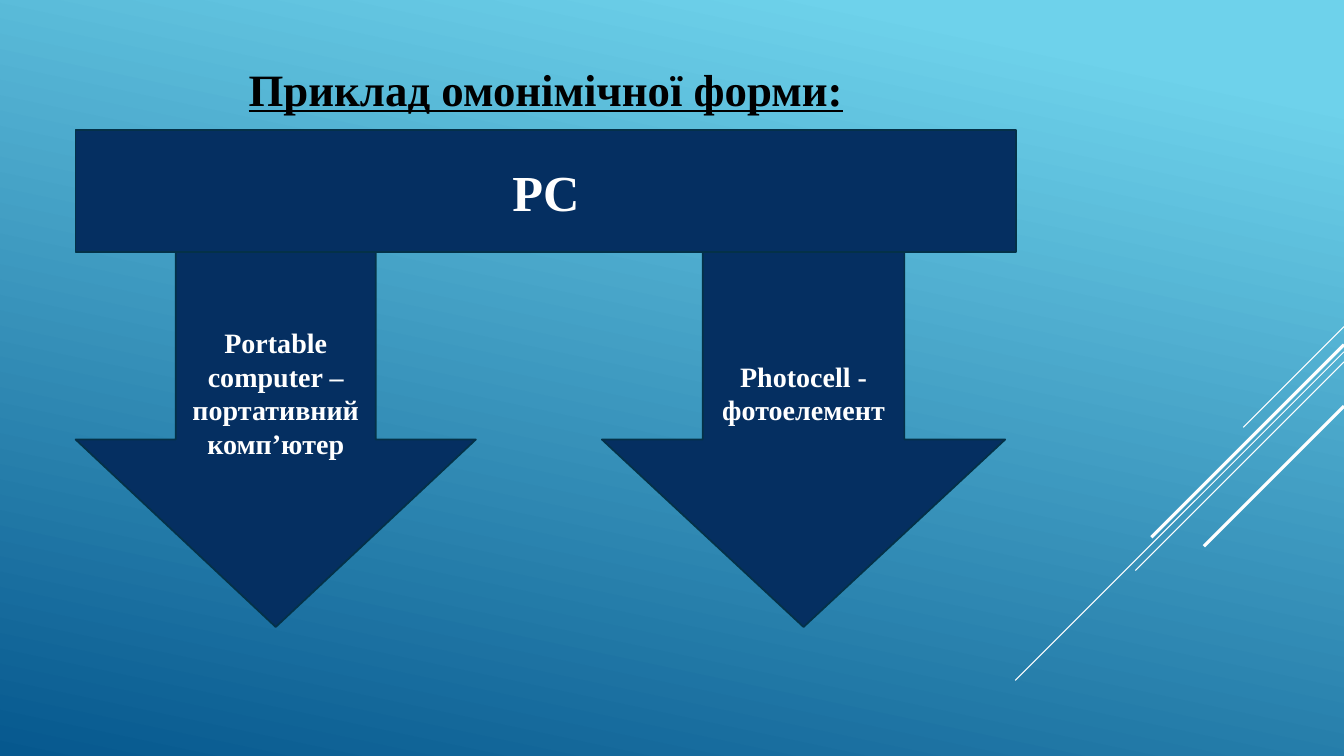
from dataclasses import dataclass

from lxml import etree
from pptx import Presentation
from pptx import util as u
from pptx.dml.color import RGBColor
from pptx.enum import shapes, text
from pptx.oxml import ns
from pptx.slide import Slide
from pptx.text.text import TextFrame

SKY = RGBColor(0x6E, 0xD2, 0xEB)
DEEP_BLUE = RGBColor(0x06, 0x58, 0x8E)
NAVY = RGBColor(0x05, 0x2F, 0x61)
NAVY_EDGE = RGBColor(0x04, 0x31, 0x48)
WHITE = RGBColor(0xFF, 0xFF, 0xFF)
BLACK = RGBColor(0x00, 0x00, 0x00)

FONT = "Times New Roman"
SLIDE_WIDTH = 13.33
MARGIN = 0.75
CONTENT_WIDTH = 9.33
BAR_TOP, BAR_HEIGHT = 1.29, 1.21
ARROW_TOP, ARROW_HEIGHT = BAR_TOP + BAR_HEIGHT, 3.72


@dataclass(frozen=True)
class Streak:
    """A 45-degree line running down and left from the right edge."""
    top: float
    reach: float
    weight: float


@dataclass(frozen=True)
class Block:
    kind: shapes.MSO_SHAPE
    left: float
    top: float
    width: float
    height: float
    label: str
    size: int


STREAKS = (
    Streak(3.24, 1.0, 0.75),
    Streak(3.49, 3.26, 0.75),
    Streak(3.59, 2.07, 0.75),
    Streak(3.42, 1.91, 2.25),
    Streak(4.03, 1.39, 2.25),
)

BLOCKS = (
    Block(shapes.MSO_SHAPE.RECTANGLE, MARGIN, BAR_TOP, CONTENT_WIDTH, BAR_HEIGHT, "PC", 36),
    Block(shapes.MSO_SHAPE.DOWN_ARROW, MARGIN, ARROW_TOP, 3.97, ARROW_HEIGHT,
          "Portable computer – портативний комп’ютер", 20),
    Block(shapes.MSO_SHAPE.DOWN_ARROW, 5.97, ARROW_TOP, 4, ARROW_HEIGHT,
          "Photocell - фотоелемент", 20),
)


def paint_background(slide: Slide) -> None:
    fill = slide.background.fill
    fill.gradient()
    fill.gradient_angle = 360 - 102
    for stop, color, position in zip(fill.gradient_stops, (SKY, DEEP_BLUE), (0.1, 1)):
        stop.color.rgb = color
        stop.position = position


def draw_streak(slide: Slide, streak: Streak) -> None:
    line = slide.shapes.add_connector(
        shapes.MSO_CONNECTOR.STRAIGHT,
        u.Inches(SLIDE_WIDTH), u.Inches(streak.top),
        u.Inches(SLIDE_WIDTH - streak.reach), u.Inches(streak.top + streak.reach))
    line.line.color.rgb = WHITE
    line.line.width = u.Pt(streak.weight)
    etree.SubElement(line._element.spPr, ns.qn("a:effectLst"))


def write_centred(frame: TextFrame, words: str, size: int, color: RGBColor,
                  underline: bool = False) -> None:
    frame.word_wrap = True
    paragraph = frame.paragraphs[0]
    paragraph.alignment = text.PP_ALIGN.CENTER
    run = paragraph.add_run()
    run.text = words
    run.font.name = FONT
    run.font.size = u.Pt(size)
    run.font.bold = True
    run.font.underline = underline
    run.font.color.rgb = color


def draw_title(slide: Slide) -> None:
    title = slide.shapes.add_textbox(
        u.Inches(MARGIN), u.Inches(0.56), u.Inches(CONTENT_WIDTH), u.Inches(6))
    write_centred(title.text_frame, "Приклад омонімічної форми:", 32, BLACK, underline=True)
    title.text_frame.paragraphs[0].space_before = u.Pt(3.6)
    title.text_frame.paragraphs[0].space_after = u.Pt(6)


def draw_block(slide: Slide, block: Block) -> None:
    shape = slide.shapes.add_shape(
        block.kind, u.Inches(block.left), u.Inches(block.top),
        u.Inches(block.width), u.Inches(block.height))
    shape.shadow.inherit = False
    shape.fill.solid()
    shape.fill.fore_color.rgb = NAVY
    shape.line.color.rgb = NAVY_EDGE
    shape.line.width = u.Pt(1.25)
    shape.text_frame.vertical_anchor = text.MSO_ANCHOR.MIDDLE
    write_centred(shape.text_frame, block.label, block.size, WHITE)


def main() -> None:
    deck = Presentation()
    deck.slide_width = u.Inches(SLIDE_WIDTH)
    deck.slide_height = u.Inches(7.5)
    slide = deck.slides.add_slide(deck.slide_layouts[6])
    paint_background(slide)
    for streak in STREAKS:
        draw_streak(slide, streak)
    draw_title(slide)
    for block in BLOCKS:
        draw_block(slide, block)
    deck.save("out.pptx")


if __name__ == "__main__":
    main()
